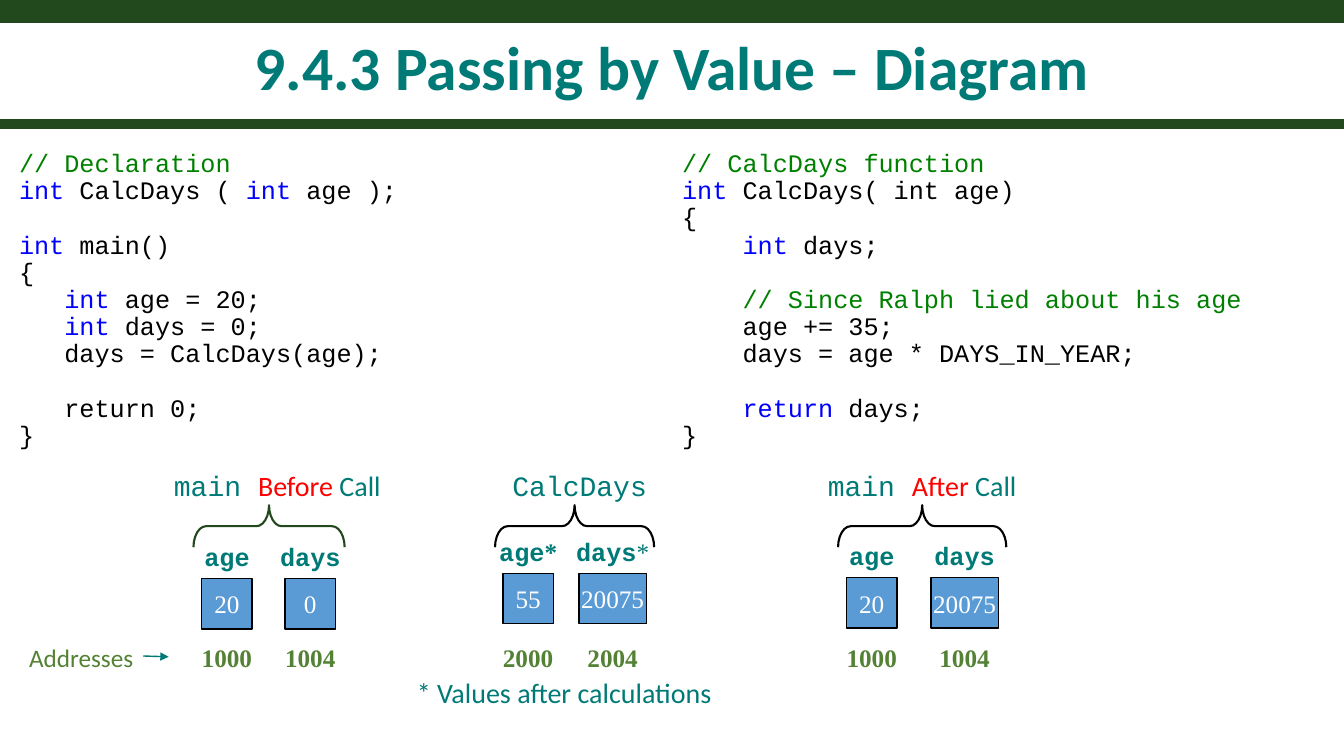
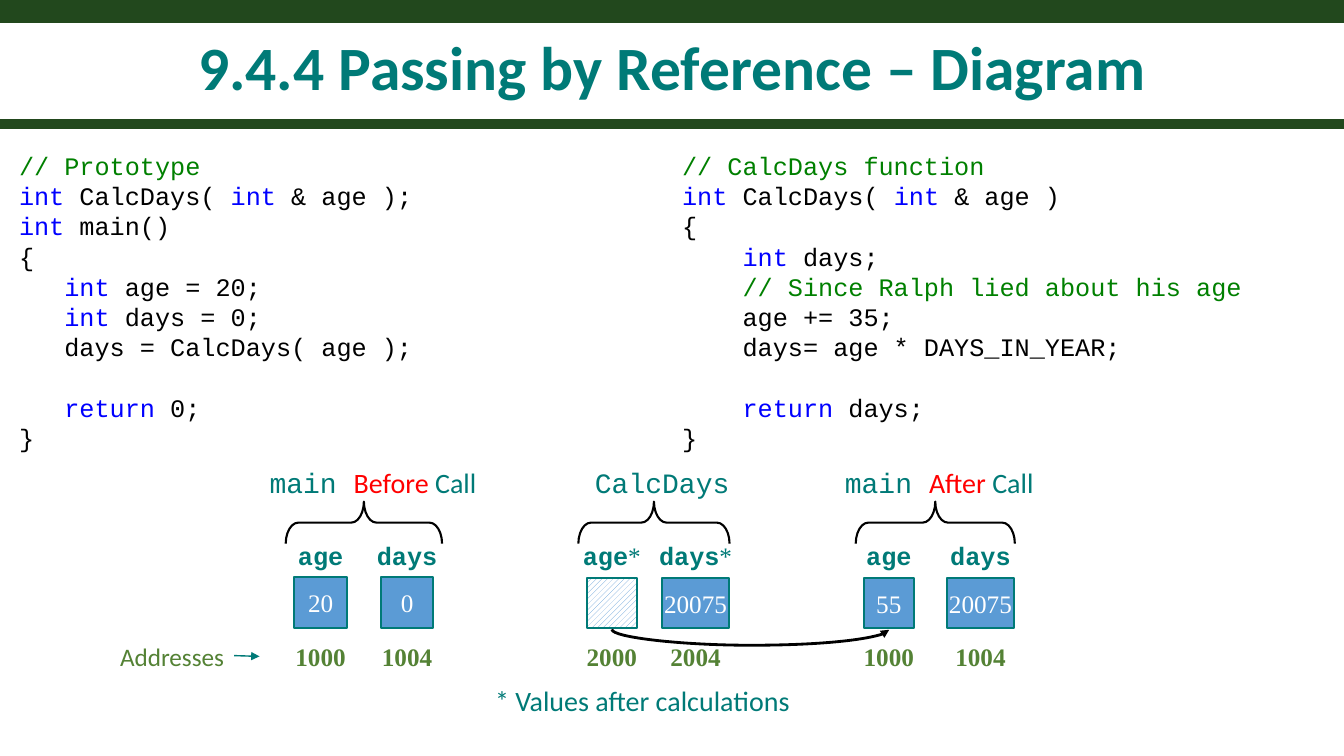
from lxml import etree
from pptx import Presentation
from pptx.dml.color import RGBColor
from pptx.enum.dml import MSO_PATTERN
from pptx.enum.shapes import MSO_CONNECTOR, MSO_SHAPE
from pptx.enum.text import MSO_ANCHOR, PP_ALIGN
from pptx.oxml.ns import qn
from pptx.util import Cm, Pt

HUES = {"band": "22481D", "teal": "007A77", "leaf": "548235", "red": "FF0000",
        "blue": "0000FF", "note": "008000", "black": "000000",
        "white": "FFFFFF", "cell": "5B9BD5"}
SANS, MONO, SERIF = "Calibri", "Courier New", "Times New Roman"
INK = {name: RGBColor.from_string(code) for name, code in HUES.items()}


def write(para, runs, align=PP_ALIGN.CENTER):
    """Add runs of (text, font, size, colour, bold) to a paragraph."""
    para.alignment = align
    for text, face, size, hue, bold in runs:
        run = para.add_run()
        run.text = text
        font = run.font
        font.name, font.size, font.bold = face, Pt(size), bold
        font.color.rgb = INK[hue]


def rule(slide, kind, ends, hue, width, head=False):
    """Draw a line between two points in cm, with an arrowhead on demand."""
    line = slide.shapes.add_connector(kind, *[Cm(n) for n in ends])
    line.line.color.rgb = INK[hue]
    line.line.width = Pt(width)
    if head:
        tip = etree.SubElement(line.line._get_or_add_ln(), qn("a:tailEnd"))
        tip.set("type", "triangle")
    etree.SubElement(line.element.spPr, qn("a:effectLst"))
    return line


# Runs used in the diagrams
AGE = ("age", MONO, 18, "teal", True)
DAYS = ("days", MONO, 18, "teal", True)
STAR = ("*", SERIF, 18, "teal", False)
BOLD = ("*", SERIF, 18, "teal", True)
MAIN = ("main ", MONO, 20, "teal", False)
CALL = (" Call", SANS, 20, "teal", False)
FIRST = [MAIN, ("Before", SANS, 20, "red", False), CALL]
CALC = [("CalcDays", MONO, 20, "teal", False)]
LAST = [MAIN, ("After", SANS, 20, "red", False), CALL]

# Code: ~word~ is blue, a line with // is green, "" is an empty line
# Groups: heading, its centre, brace centre, width and colour, top of cells, cells
# Cells: label, centre, width, value (None is hatched), address
PAGES = [
    {"title": "9.4.3 Passing by Value – Diagram", "pitch": 19.44,
     "left": ["// Declaration", "~int~ CalcDays ( ~int~ age );", "",
              "~int~ main()", "{", "   ~int~ age = 20;", "   ~int~ days = 0;",
              "   days = CalcDays(age);", "", "   return 0;", "}"],
     "right": ["// CalcDays function", "~int~ CalcDays( int age)", "{",
               "    ~int~ days;", "", "    // Since Ralph lied about his age",
               "    age += 35;", "    days = age * DAYS_IN_YEAR;", "",
               "    ~return~ days;", "}"],
     "head": 11.68, "brace": 13.26, "addr": 16.05, "edge": ("black", 1),
     "mark": 0.43, "foot": (14.22, 16.89),
     "groups": [
         (FIRST, 6.99, 6.78, 3.81, "band", 14.58,
          [([AGE], 5.72, 1.27, "20", "1000"), ([DAYS], 7.82, 1.27, "0", "1004")]),
         (CALC, 14.61, 14.48, 4.01, "black", 14.45,
          [([AGE, BOLD], 13.31, 1.27, "55", "2000"),
           ([DAYS, STAR], 15.44, 1.7, "20075", "2004")]),
         (LAST, 23.24, 23.24, 4.24, "black", 14.56,
          [([AGE], 21.97, 1.27, "20", "1000"),
           ([DAYS], 24.31, 1.7, "20075", "1004")])]},
    {"title": "9.4.4 Passing by Reference – Diagram", "pitch": 21.6,
     "left": ["// Prototype", "~int~ CalcDays( ~int~ & age );", "~int~ main()",
              "{", "   ~int~ age = 20;", "   ~int~ days = 0;",
              "   days = CalcDays( age );", "", "   ~return~ 0;", "}"],
     "right": ["// CalcDays function", "~int~ CalcDays( ~int~ & age )", "{",
               "    ~int~ days;", "    // Since Ralph lied about his age",
               "    age += 35;", "    days= age * DAYS_IN_YEAR;", "",
               "    ~return~ days;", "}"],
     "head": 11.6, "brace": 13.17, "addr": 16.04, "edge": ("teal", 1.5),
     "mark": 2.72, "foot": (16.19, 17.09),
     "groups": [
         (FIRST, 9.4, 9.17, 3.94, "black", 14.55,
          [([AGE], 8.08, 1.32, "20", "1000"), ([DAYS], 10.26, 1.32, "0", "1004")]),
         (CALC, 16.69, 16.48, 3.81, "black", 14.56,
          [([AGE, STAR], 15.42, 1.27, None, "2000"),
           ([DAYS, STAR], 17.53, 1.7, "20075", "2004")]),
         (LAST, 23.67, 23.57, 4.01, "black", 14.56,
          [([AGE], 22.4, 1.27, "55", "1000"),
           ([DAYS], 24.71, 1.7, "20075", "1004")])]},
]

deck = Presentation()
deck.slide_width, deck.slide_height = Cm(33.87), Cm(19.05)

for page in PAGES:
    slide = deck.slides.add_slide(deck.slide_layouts[5])
    shapes = slide.shapes

    # Bands and title
    for y, width in ((0.28, 16.5), (3.12, 7.5)):
        rule(slide, MSO_CONNECTOR.STRAIGHT, (0, y, 33.87, y), "band", width)
    title = shapes.title
    title.left, title.top, title.width, title.height = (
        Cm(0.23), Cm(0.63), Cm(33.43), Cm(2.31))
    title.text_frame.vertical_anchor = MSO_ANCHOR.MIDDLE
    para = title.text_frame.paragraphs[0]
    para.line_spacing = 0.9
    write(para, [(page["title"], SANS, 44, "teal", True)])

    # Code columns
    for side, x in (("left", 0.23), ("right", 16.94)):
        frame = shapes.add_textbox(Cm(x), Cm(3.66), Cm(16.41), Cm(7.6)).text_frame
        frame.word_wrap = True
        para, gap = frame.paragraphs[0], 0
        for row, code in enumerate(page[side]):
            if not code:
                gap = page["pitch"]
                continue
            if row:
                para = frame.add_paragraph()
            para.line_spacing = Pt(page["pitch"])
            para.space_before, gap = Pt(gap), 0
            plain = "note" if "//" in code else "black"
            write(para, [(bit, MONO, 18, "blue" if n % 2 else plain, False)
                         for n, bit in enumerate(code.split("~")) if bit],
                  PP_ALIGN.LEFT)

    # Text of the diagram: centre, top, width, runs
    x, y = page["foot"]
    texts = [(x, y, 8.13, [("* Values after calculations", SANS, 20, "teal", False)])]

    for head, mid, hub, span, hue, top, cells in page["groups"]:
        texts.append((mid, page["head"], 6.8, head))

        # Brace, a left brace turned upright
        brace = shapes.add_shape(
            MSO_SHAPE.LEFT_BRACE, Cm(hub - 0.53), Cm(page["brace"] - span / 2),
            Cm(1.06), Cm(span))
        brace.rotation = 90
        brace.adjustments[0] = 0.3
        brace.shadow.inherit = False
        brace.fill.background()
        brace.line.color.rgb = INK[hue]
        brace.line.width = Pt(1.5)

        # Memory cells
        for label, x, wide, value, addr in cells:
            cell = shapes.add_shape(MSO_SHAPE.RECTANGLE, Cm(x - wide / 2),
                                    Cm(top), Cm(wide), Cm(1.27))
            cell.shadow.inherit = False
            edge, width = page["edge"]
            cell.line.color.rgb = INK[edge]
            cell.line.width = Pt(width)
            if value:
                cell.fill.solid()
                cell.fill.fore_color.rgb = INK["cell"]
                frame = cell.text_frame
                frame.word_wrap = False
                frame.vertical_anchor = MSO_ANCHOR.MIDDLE
                write(frame.paragraphs[0], [(value, SERIF, 18, "white", False)])
            else:
                cell.fill.patterned()
                cell.fill.pattern = MSO_PATTERN.WIDE_UPWARD_DIAGONAL
                cell.fill.fore_color.rgb = INK["cell"]
                cell.fill.back_color.rgb = INK["white"]
                # Reference from the hatched cell to the caller's age
                curve = rule(slide, MSO_CONNECTOR.CURVE,
                             (18.92, 12.37, 18.91, 19.36), "black", 2, True)
                curve.rotation = 270
                bend = curve.element.spPr.find(qn("a:prstGeom"))
                guide = etree.SubElement(bend.find(qn("a:avLst")), qn("a:gd"))
                guide.set("name", "adj1")
                guide.set("fmla", "val 4000000")
            texts.append((x, top - 1.06, 2.6, label))
            texts.append((x, page["addr"], 2.54, [(addr, SERIF, 18, "leaf", True)]))

    # Address row marker
    x, y = page["mark"], page["addr"]
    texts.append((x + 1.59, y, 3.18, [("Addresses", SANS, 18, "leaf", False)]))
    rule(slide, MSO_CONNECTOR.STRAIGHT, (x + 3.18, y + 0.48, x + 3.82, y + 0.5),
         "teal", 1, True)

    for x, y, wide, runs in texts:
        frame = shapes.add_textbox(Cm(x - wide / 2), Cm(y), Cm(wide), Cm(1.02)).text_frame
        frame.word_wrap = True
        right = runs[0][0] == "Addresses"
        write(frame.paragraphs[0], runs, PP_ALIGN.RIGHT if right else PP_ALIGN.CENTER)

deck.save("out.pptx")
